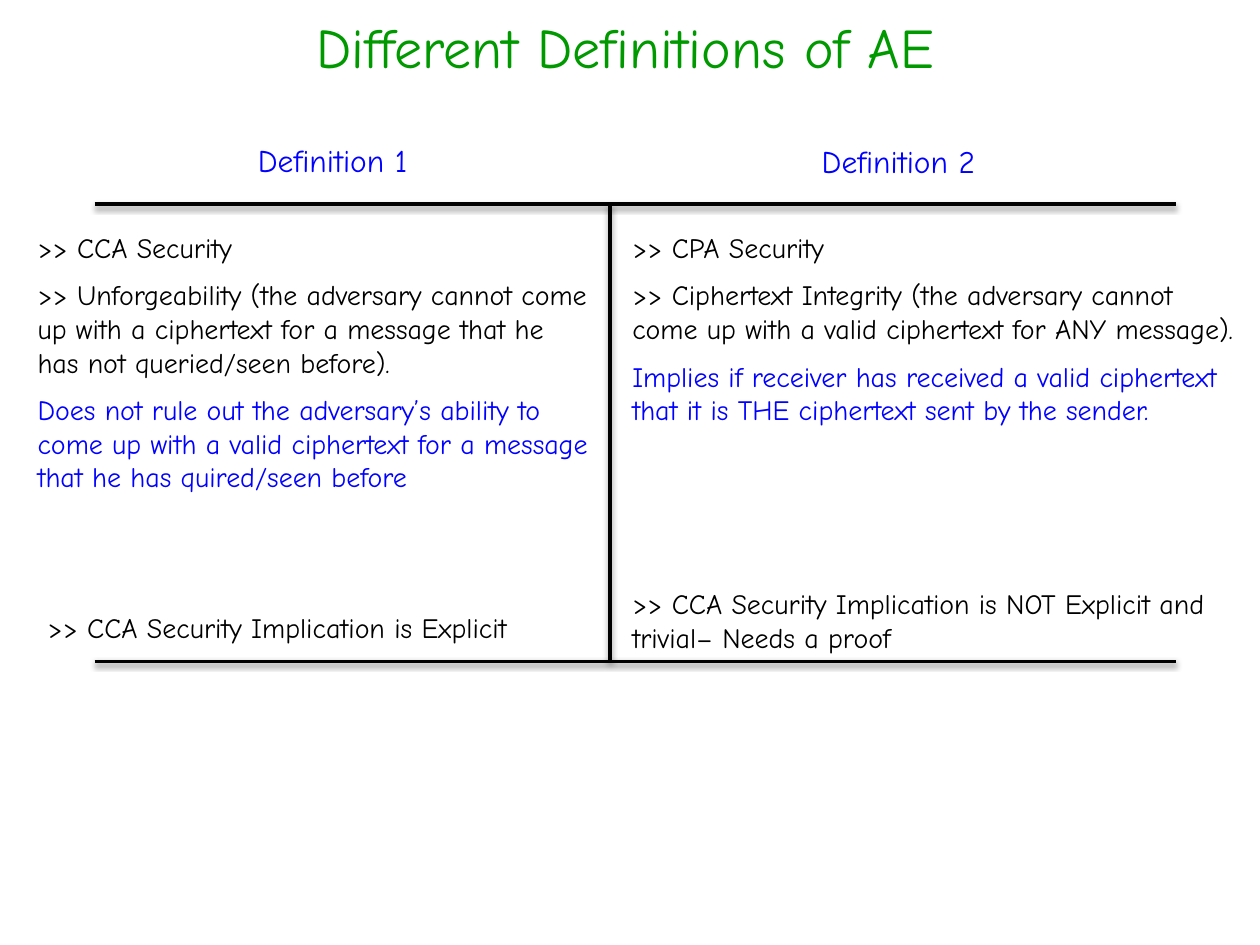
from lxml import etree
from pptx import Presentation
from pptx.dml.color import RGBColor
from pptx.enum.shapes import MSO_CONNECTOR
from pptx.enum.text import MSO_ANCHOR, MSO_AUTO_SIZE, PP_ALIGN
from pptx.oxml import parse_xml
from pptx.util import Emu, Pt

PX = 9144  # 100 px to the inch
FONT = "Comic Neue"
COLOURS = {"title": "009900", "accent": "0000FF", "body": "000000", "rule": "000000"}
DRAWING_NS = "http://schemas.openxmlformats.org/drawingml/2006/main"
SHADOW = (
    f'<a:effectLst xmlns:a="{DRAWING_NS}">'
    '<a:outerShdw blurRad="40000" dist="20000" dir="5400000" rotWithShape="0">'
    f'<a:srgbClr val="{COLOURS["rule"]}"><a:alpha val="38000"/></a:srgbClr>'
    "</a:outerShdw></a:effectLst>"
)

LEFT_POINTS = [
    (">> CCA Security", "body"),
    (">> Unforgeability (the adversary cannot come up with a ciphertext for a "
     "message that he has not queried/seen before).", "body"),
    ("Does not rule out the adversary’s ability to come up with a valid ciphertext "
     "for a message that he has quired/seen before", "accent"),
]
RIGHT_POINTS = [
    (">> CPA Security", "body"),
    (">> Ciphertext Integrity (the adversary cannot come up with a valid ciphertext "
     "for ANY message).", "body"),
    ("Implies if receiver has received a valid ciphertext that it is THE ciphertext "
     "sent by the sender.", "accent"),
]
LEFT_REMARK = ">> CCA Security Implication is Explicit"
RIGHT_REMARK = ">> CCA Security Implication is NOT Explicit and trivial– Needs a proof"


def px(*lengths):
    return [Emu(length * PX) for length in lengths]


def fill_text(shape, lines, size, alignment=PP_ALIGN.LEFT):
    """Write (text, colour name) lines as paragraphs and format them."""
    frame = shape.text_frame
    frame.word_wrap = True
    frame.auto_size = MSO_AUTO_SIZE.NONE
    frame.vertical_anchor = MSO_ANCHOR.TOP
    frame.text = "\n".join(text for text, _ in lines)
    for index, (paragraph, (_, colour)) in enumerate(zip(frame.paragraphs, lines)):
        paragraph.alignment = alignment
        paragraph.space_before = Pt(8 if index else 0)
        font = paragraph.runs[0].font
        font.name, font.size = FONT, Pt(size)
        font.color.rgb = RGBColor.from_string(COLOURS[colour])


def add_title(slide, box):
    title = slide.shapes.title
    title.left, title.top, title.width, title.height = px(*box)
    fill_text(title, [("Different Definitions of AE", "title")], 32, PP_ALIGN.CENTER)


def add_text(slide, box, lines, size=16, alignment=PP_ALIGN.LEFT):
    fill_text(slide.shapes.add_textbox(*px(*box)), lines, size, alignment)


def add_rule(slide, start, end):
    rule = slide.shapes.add_connector(MSO_CONNECTOR.STRAIGHT, *px(*start, *end))
    rule.line.color.rgb = RGBColor.from_string(COLOURS["rule"])
    rule.line.width = Pt(2)
    rule._element.spPr.append(parse_xml(SHADOW))


def add_frame(slide, box, divider):
    """Draw rules along the top and bottom of the box, and one between columns."""
    left, top, width, height = box
    right, bottom = left + width, top + height
    add_rule(slide, (left + divider, top), (left + divider, bottom))
    for y in (top, bottom):
        add_rule(slide, (left, y), (right, y))


def add_definition(slide, box, heading, heading_offset, points, remark, remark_box):
    """Place heading, points and remark; offsets are relative to the box."""
    left, top, width, _ = box
    x, y = heading_offset
    add_text(slide, (left + x, top + y, 378, 40), [(heading, "accent")], 18, PP_ALIGN.CENTER)
    add_text(slide, (left, top + 71, width, 226), points)
    x, y, remark_width, remark_height = remark_box
    add_text(slide, (left + x, top + y, remark_width, remark_height), [(remark, "body")])


def main():
    presentation = Presentation()
    presentation.slide_width, presentation.slide_height = px(1000, 750)
    slide = presentation.slides.add_slide(presentation.slide_layouts[5])
    add_title(slide, (20, 5, 953, 55))
    add_frame(slide, (75, 162, 858, 363), divider=409)
    add_definition(slide, (20, 107, 457, 418), "Definition 1", (55, 0),
                   LEFT_POINTS, LEFT_REMARK, (8, 373, 432, 37))
    add_definition(slide, (492, 107, 504, 418), "Definition 2", (32, 1),
                   RIGHT_POINTS, RIGHT_REMARK, (0, 354, 480, 64))
    presentation.save("out.pptx")


if __name__ == "__main__":
    main()
